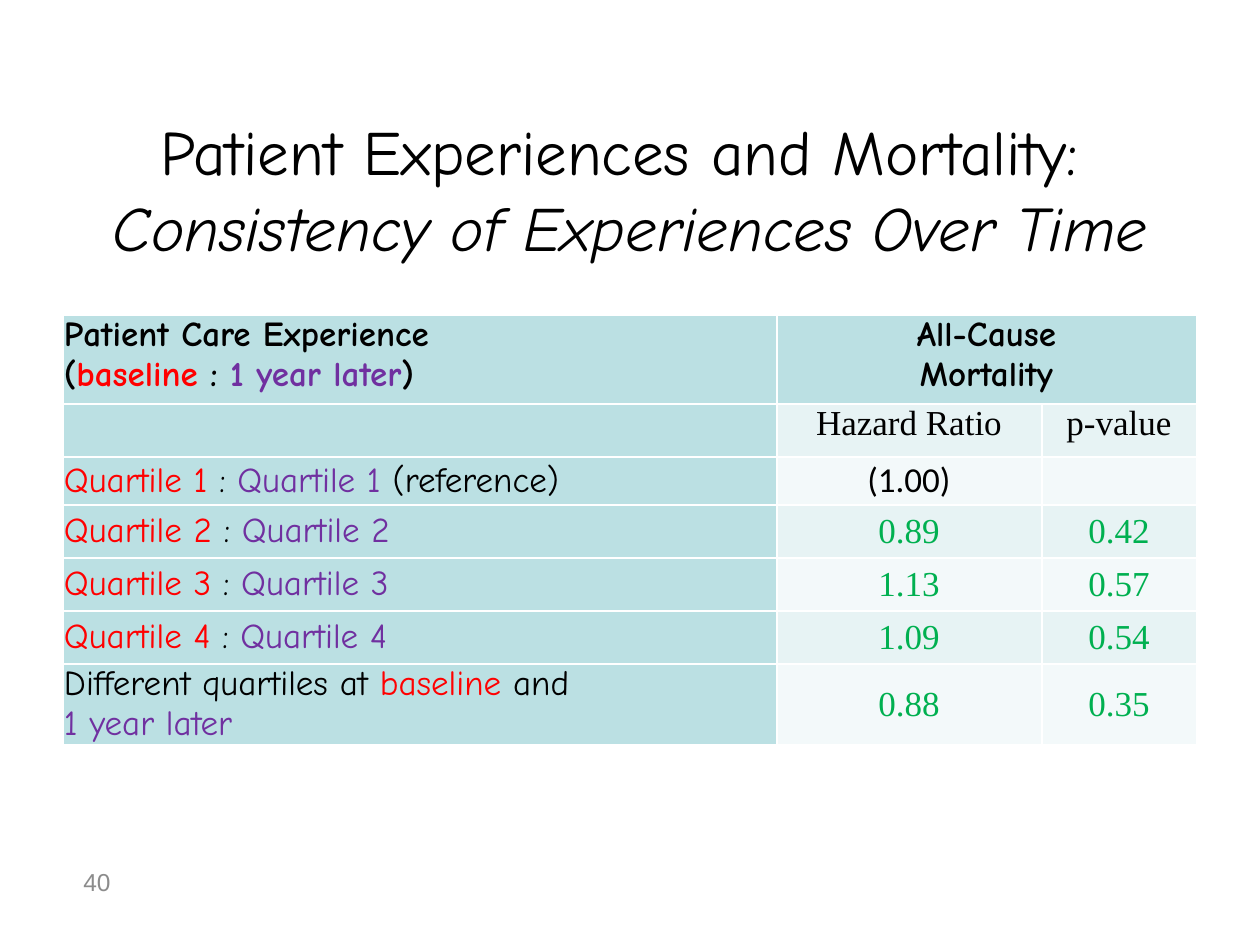
import copy
import dataclasses
import typing

import lxml.etree
import pptx
import pptx.dml.color
import pptx.enum.text
import pptx.oxml.ns
import pptx.util

RGB = pptx.dml.color.RGBColor
BLACK = RGB(0x00, 0x00, 0x00)
WHITE = RGB(0xFF, 0xFF, 0xFF)
RED = RGB(0xFF, 0x00, 0x00)
PURPLE = RGB(0x70, 0x30, 0xA0)
GREEN = RGB(0x00, 0xB0, 0x50)
GRAY = RGB(0x8C, 0x8C, 0x8C)
TEAL = RGB(0xBB, 0xE0, 0xE3)
PALE = RGB(0xE7, 0xF3, 0xF4)
FAINT = RGB(0xF3, 0xF9, 0xFA)
COMIC = "Comic Neue"
TIMES = "Times New Roman"
ALIGN = pptx.enum.text.PP_ALIGN
ANCHOR = pptx.enum.text.MSO_ANCHOR
SCALE = 914400 / 126
WIDTHS = (714, 265, 155)
HEIGHTS = (89, 53, 48, 53, 53, 53, 54)

Part = tuple[str, RGB]
Line = tuple[Part, ...]


@dataclasses.dataclass
class Entry:
    lines: tuple[Line, ...] = ()
    font: str = COMIC
    bold: bool = False
    align: typing.Any = ALIGN.CENTER
    anchor: typing.Any = ANCHOR.MIDDLE


def px(count: int) -> pptx.util.Emu:
    return pptx.util.Emu(round(count * SCALE))


def style(run, size: int, face: str, color: RGB) -> None:
    run.font.size = pptx.util.Pt(size)
    run.font.name = face
    run.font.color.rgb = color


def border(cell) -> None:
    props = cell._tc.get_or_add_tcPr()
    for side in ("a:lnL", "a:lnR", "a:lnT", "a:lnB"):
        edge = lxml.etree.SubElement(props, pptx.oxml.ns.qn(side), w="12700")
        fill = lxml.etree.SubElement(edge, pptx.oxml.ns.qn("a:solidFill"))
        lxml.etree.SubElement(fill, pptx.oxml.ns.qn("a:srgbClr"), val=str(WHITE))


def draw_cell(cell, entry: Entry, color: RGB) -> None:
    border(cell)
    cell.fill.solid()
    cell.fill.fore_color.rgb = color
    cell.margin_left, cell.margin_right = px(1), px(2)
    cell.margin_top = cell.margin_bottom = 0
    cell.vertical_anchor = entry.anchor
    frame = cell.text_frame
    for index, line in enumerate(entry.lines):
        para = frame.add_paragraph() if index else frame.paragraphs[0]
        para.alignment = entry.align
        for text, ink in line:
            run = para.add_run()
            run.text = text
            style(run, 20, entry.font, ink)
            run.font.bold = entry.bold


def label(*lines: Line) -> Entry:
    return Entry(lines, align=ALIGN.LEFT)


def pair(number: int, *extra: Part) -> Entry:
    name = f"Quartile {number}"
    return label(((name, RED), (" : ", BLACK), (name, PURPLE), *extra))


def value(text: str) -> Entry:
    return Entry((((text, GREEN),),), TIMES)


def heading(text: str) -> Entry:
    return Entry((((text, BLACK),),), TIMES, anchor=ANCHOR.TOP)


def draw_title(slide) -> None:
    title = slide.shapes.title
    title.left, title.top, title.width, title.height = px(0), px(94), px(1260), px(189)
    frame = title.text_frame
    frame.text = "Patient Experiences and Mortality: \vConsistency of Experiences Over Time"
    frame.auto_size = pptx.enum.text.MSO_AUTO_SIZE.NONE
    frame.vertical_anchor = ANCHOR.MIDDLE
    para = frame.paragraphs[0]
    para.alignment = ALIGN.CENTER
    for run in para.runs:
        style(run, 36, COMIC, BLACK)
    para.runs[1].font.italic = True
    gap = para._p.find(pptx.oxml.ns.qn("a:br"))
    gap.append(copy.deepcopy(para.runs[0]._r.rPr))


def draw_table(slide) -> None:
    top = Entry(
        (
            (("Patient Care Experience", BLACK),),
            (("(", BLACK), ("baseline", RED), (" : ", BLACK),
             ("1 year later", PURPLE), (")", BLACK)),
        ),
        bold=True, align=ALIGN.LEFT, anchor=ANCHOR.TOP,
    )
    cause = Entry(
        ((("All-Cause", BLACK),), (("Mortality", BLACK),)),
        bold=True, anchor=ANCHOR.TOP,
    )
    mixed = label(
        (("Different quartiles at ", BLACK), ("baseline", RED), (" and", BLACK)),
        (("1 year later", PURPLE),),
    )
    base = Entry(((("(1.00)", BLACK),),), "Calibri")
    rows = (
        (top, cause, Entry()),
        (Entry(), heading("Hazard Ratio"), heading("p-value")),
        (pair(1, (" (reference)", BLACK)), base, Entry()),
        (pair(2), value("0.89"), value("0.42")),
        (pair(3), value("1.13"), value("0.57")),
        (pair(4), value("1.09"), value("0.54")),
        (mixed, value("0.88"), value("0.35")),
    )
    table = slide.shapes.add_table(
        len(HEIGHTS), len(WIDTHS), px(63), px(315), px(sum(WIDTHS)), px(sum(HEIGHTS))
    ).table
    for column, width in zip(table.columns, WIDTHS):
        column.width = px(width)
    for row, height in zip(table.rows, HEIGHTS):
        row.height = px(height)
    for down, entries in enumerate(rows):
        band = PALE if down % 2 else FAINT
        for across, entry in enumerate(entries):
            color = TEAL if down == 0 or across == 0 else band
            draw_cell(table.cell(down, across), entry, color)
    table.cell(0, 1).merge(table.cell(0, 2))


def draw_number(slide) -> None:
    box = slide.shapes.add_textbox(px(71), px(861), px(330), px(66))
    box.text_frame.word_wrap = True
    box.text_frame.text = "40"
    style(box.text_frame.paragraphs[0].runs[0], 14, "Arial", GRAY)


def main() -> None:
    deck = pptx.Presentation()
    deck.slide_width, deck.slide_height = px(1260), px(945)
    slide = deck.slides.add_slide(deck.slide_layouts[5])
    draw_title(slide)
    draw_table(slide)
    draw_number(slide)
    deck.save("out.pptx")


if __name__ == "__main__":
    main()
